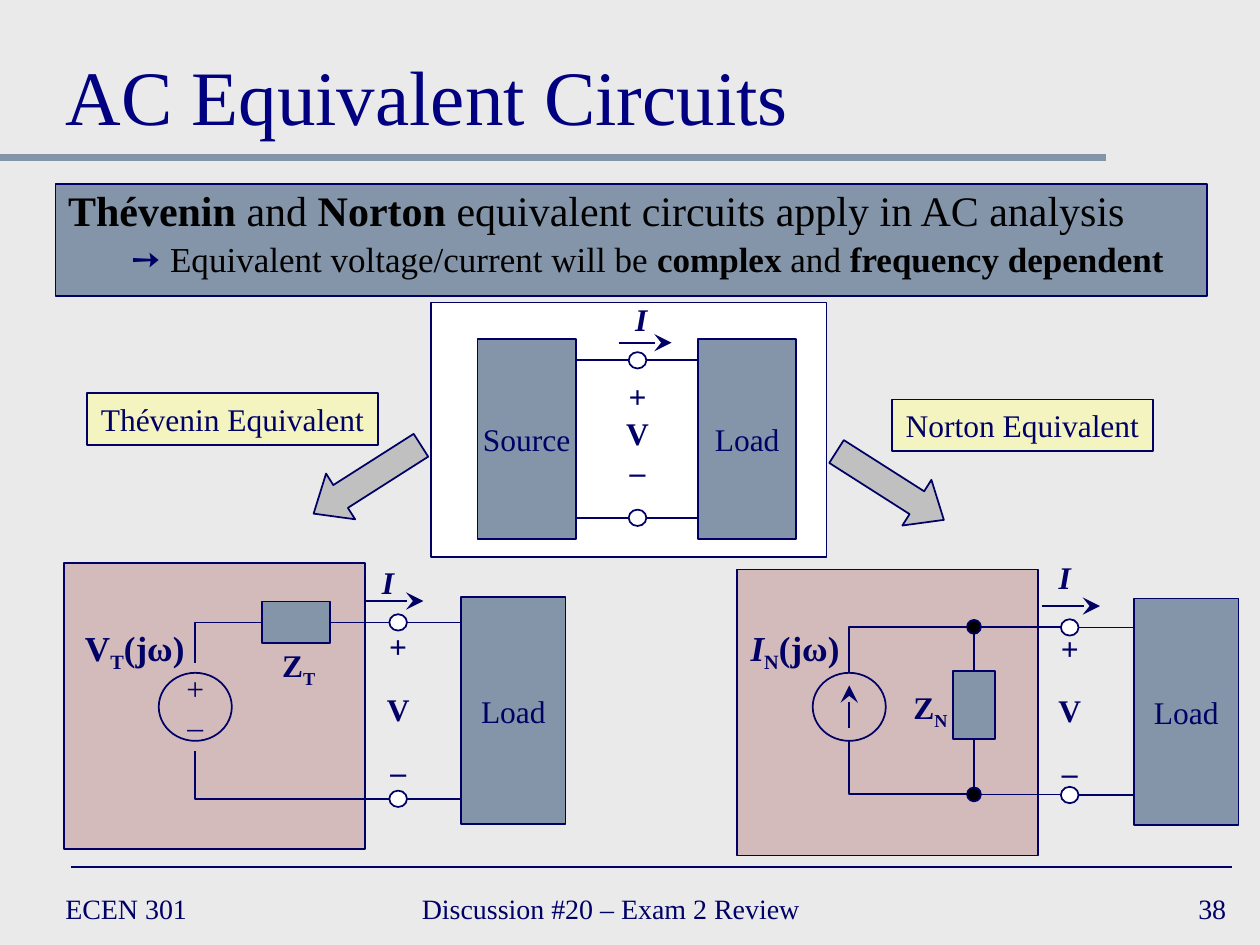
from dataclasses import dataclass
from lxml import etree
from pptx import Presentation
from pptx import util as u
from pptx.dml.color import RGBColor
from pptx.enum import shapes, text
from pptx.oxml import ns

RECT, OVAL = shapes.MSO_SHAPE.RECTANGLE, shapes.MSO_SHAPE.OVAL
LEFT, CENTER, RIGHT = text.PP_ALIGN.LEFT, text.PP_ALIGN.CENTER, text.PP_ALIGN.RIGHT
CELL = u.Inches(10) / 100  # the slide is a grid of 100 columns and 75 rows


@dataclass(frozen=True)
class Theme:
    font: str = "Times New Roman"
    paper: str = "EAEAEA"
    ink: str = "000066"
    title: str = "000080"
    steel: str = "8495A9"
    maroon: str = "800000"
    yellow: str = "FFFF99"
    grey: str = "C0C0C0"
    white: str = "FFFFFF"
    black: str = "000000"
    title_size: int = 44
    lead_size: int = 24
    detail_size: int = 20
    label_size: int = 18
    footer_size: int = 16


THEME = Theme()


def cells(*counts):
    return [u.Emu(round(count * CELL)) for count in counts]


def add_xml(parent, tag, **attributes):
    return etree.SubElement(parent, ns.qn(tag), attributes)


def color(name):
    return RGBColor.from_string(name)


def style(para, size, ink=THEME.ink, align=LEFT, bold=False):
    para.alignment = align
    font = para.font
    font.name, font.size, font.bold = THEME.font, u.Pt(size), bold
    font.color.rgb = color(ink)


def paint(shape, fill, alpha=None, width=1):
    shape.line.color.rgb = color(THEME.ink)
    shape.line.width = u.Pt(width)
    if fill is None:
        shape.fill.background()
        return
    shape.fill.solid()
    shape.fill.fore_color.rgb = color(fill)
    if alpha:
        tint = shape.fill._xPr.find(".//" + ns.qn("a:srgbClr"))
        add_xml(tint, "a:alpha", val=str(alpha * 1000))


@dataclass
class Area:
    """A region of the page; its parts are placed in cells from its corner."""
    page: object
    left: float = 0
    top: float = 0

    def inner(self, left, top):
        return Area(self.page, self.left + left, self.top + top)

    def shape(self, kind, left, top, width, height, fill=THEME.steel, alpha=None, caption=""):
        shape = self.page.shapes.add_shape(
            kind, *cells(self.left + left, self.top + top, width, height))
        shape.shadow.inherit = False
        paint(shape, fill, alpha)
        if caption:
            shape.text_frame.text = caption
            shape.text_frame.word_wrap = False
            style(shape.text_frame.paragraphs[0], THEME.label_size, align=CENTER)
        return shape

    def dot(self, x, y, width=1.4, height=1.3, fill=THEME.white):
        return self.shape(OVAL, x - width / 2, y - height / 2, width, height, fill)

    def wire(self, start, end, corner=False, arrow=False, ink=THEME.ink, width=1):
        """Draw a line; a corner wire leaves the start level and turns once."""
        ends = cells(self.left + start[0], self.top + start[1],
                     self.left + end[0], self.top + end[1])
        kind = shapes.MSO_CONNECTOR.ELBOW if corner else shapes.MSO_CONNECTOR.STRAIGHT
        wire = self.page.shapes.add_connector(kind, *ends)
        wire.line.color.rgb = color(ink)
        wire.line.width = u.Pt(width)
        properties = wire._element.spPr
        if corner:
            properties.find(ns.qn("a:prstGeom")).set("prst", "bentConnector2")
        if arrow:
            add_xml(wire.line._get_or_add_ln(), "a:tailEnd", type="stealth", w="lg", len="lg")
        add_xml(properties, "a:effectLst")
        return wire

    def label(self, left, top, width, height, lines, size=THEME.label_size,
              bold=True, gap=0, align=CENTER, wrap=False):
        """Write lines made of (words, look) spans; look is "", "sub" or "italic"."""
        box = self.page.shapes.add_textbox(
            *cells(self.left + left, self.top + top, width, height))
        frame = box.text_frame
        frame.word_wrap = wrap
        for index, spans in enumerate(lines):
            para = frame.paragraphs[0] if index == 0 else frame.add_paragraph()
            if index:
                para.space_before = u.Pt(gap)
            style(para, size, align=align, bold=bold)
            for words, look in spans:
                span = para.add_run()
                span.text = words
                if look == "italic":
                    span.font.italic = True
                elif look == "sub":
                    span._r.get_or_add_rPr().set("baseline", "-25000")
        return box


def plain(*lines):
    return [[(line, "")] for line in lines]


def heading(page):
    title, body = page.shapes.title, page.placeholders[1]
    title.left, title.top, title.width, title.height = cells(4.2, 1.7, 91.7, 10)
    title.text_frame.text = "AC Equivalent Circuits"
    title.text_frame.vertical_anchor = text.MSO_ANCHOR.BOTTOM
    style(title.text_frame.paragraphs[0], THEME.title_size, THEME.title)

    body.left, body.top, body.width, body.height = cells(4.4, 14.6, 91.4, 8.9)
    paint(body, THEME.steel, width=0.75)
    frame = body.text_frame
    frame.auto_size = text.MSO_AUTO_SIZE.NONE
    rows = (
        (THEME.lead_size, 0.38, -0.38, 0, None,
         (("Thévenin", True), (" and ", False), ("Norton", True),
          (" equivalent circuits apply in AC analysis", False))),
        (THEME.detail_size, 0.81, -0.31, 4, "➙",
         (("Equivalent voltage/current will be ", False), ("complex", True),
          (" and ", False), ("frequency dependent", True))))
    for level, (size, margin, indent, gap, bullet, spans) in enumerate(rows):
        para = frame.add_paragraph() if level else frame.paragraphs[0]
        para.level, para.line_spacing, para.space_before = level, 0.9, u.Pt(gap)
        layout = para._p.get_or_add_pPr()
        layout.set("marL", str(u.Inches(margin)))
        layout.set("indent", str(u.Inches(indent)))
        if bullet:
            add_xml(add_xml(layout, "a:buClr"), "a:srgbClr", val=THEME.ink)
            add_xml(layout, "a:buChar", char=bullet)
        else:
            add_xml(layout, "a:buNone")
        style(para, size, THEME.black)
        for words, bold in spans:
            span = para.add_run()
            span.text, span.font.bold = words, bold


def footer(area):
    area.wire((5.6, 0), (97.8, 0))
    for left, width, words, align in ((4.2, 21.7, "ECEN 301", LEFT),
                                      (32.5, 38.3, "Discussion #20 – Exam 2 Review", LEFT),
                                      (77.5, 20.8, "38", RIGHT)):
        box = area.label(left, 1.2, width, 4.2, plain(words), THEME.footer_size,
                         bold=False, align=align, wrap=True)
        box.text_frame.vertical_anchor = text.MSO_ANCHOR.MIDDLE


def port(area, upper, lower, load, arrow, symbol_rise, voltage_top, gap):
    """Two terminals wired to a load, with the current and voltage marked."""
    load_left, load_width, load_height = load
    for row in (upper, lower):
        area.wire((1.4, row), (load_left, row))
        area.dot(0.7, row)
    area.shape(RECT, load_left, 0, load_width, load_height, caption="Load")
    x, y, length = arrow
    area.wire((x, y), (x + length, y), arrow=True)
    area.label(x + 0.3, y - symbol_rise, 3, 4, [[("I", "italic")]])
    area.label(-1.2, voltage_top, 3.8, 10 + gap / 3.5, plain("+", "V", "–"), gap=gap)


def source_circuit(area):
    area.shape(RECT, 0, 0, 31.4, 20.2, THEME.white)
    area.shape(RECT, 3.7, 2.9, 7.8, 15.9, caption="Source")
    for row in (4.6, 17.1):
        area.wire((15.7, row), (11.5, row))
    port(area.inner(15.7, 2.9), 1.7, 14.2, (5.5, 7.8, 15.9), (-0.8, 0.3, 4.2), 3.9, 2.5, 0)


def thevenin_circuit(area):
    area.shape(RECT, 0, 0, 23.9, 22.7, THEME.maroon, alpha=20)
    area.label(0.6, 4.5, 10, 4.3, [[("V", ""), ("T", "sub"), ("(jω)", "")]], THEME.detail_size)
    area.shape(OVAL, 7.5, 8.7, 5.8, 5.4, None)
    area.label(8.7, 7.9, 3.4, 7, plain("+", "–"), bold=False)
    area.label(16.2, 6.1, 4.8, 4, [[("Z", ""), ("T", "sub")]])
    impedance = area.shape(RECT, 15.7, 3.05, 5.4, 3.3)
    area.wire((25.8, 4.7), (21.1, 4.7)).end_connect(impedance, 3)
    area.wire((15.7, 4.7), (10.4, 7.9), corner=True)
    area.wire((25.8, 18.7), (10.4, 14.9), corner=True)
    port(area.inner(25.8, 2.7), 2, 16, (5.7, 8.3, 18), (-1.9, 0.3, 4.6), 3.5, 1.9, 14)


def norton_circuit(area):
    area.shape(RECT, 0, 0, 23.9, 22.7, THEME.maroon, alpha=20)
    area.label(0, 4, 9.2, 4.3, [[("I", "italic"), ("N", "sub"), ("(jω)", "")]], THEME.detail_size)
    area.shape(OVAL, 6, 8.2, 5.8, 5.4, None)
    area.wire((8.9, 12.6), (8.9, 9.2), arrow=True)
    area.label(12.9, 8.9, 4.9, 4, [[("Z", ""), ("N", "sub")]])
    impedance = area.shape(RECT, 17.15, 8.05, 3.3, 5.4)
    for row, side, circle_edge in ((4.55, 0, 8.2), (17.85, 2, 13.6)):
        area.wire((18.8, row), (18.8, 8.05)).end_connect(impedance, side)
        area.wire((18.8, row), (8.9, circle_edge), corner=True)
        area.wire((18.8, row), (25.7, row))
        area.dot(18.8, row, 1.1, 1.1, THEME.black)
    port(area.inner(25.7, 2.3), 2.3, 15.6, (5.8, 8.3, 18), (-1.5, 0.6, 4.6), 4.3, 1.9, 14)


def equivalents(area):
    """Block arrows and captions that lead from the source to both circuits."""
    for left, top, turn in ((65.6, 36.4, 32.5), (24.1, 35.9, 147.5)):
        arrow = area.shape(shapes.MSO_SHAPE.RIGHT_ARROW, left, top, 10.1, 4.3, THEME.grey)
        arrow.adjustments[1] = 0.59
        arrow.rotation = turn
    for left, top, width, name in ((70.8, 31.7, 20.7, "Norton"), (6.9, 31.2, 23.1, "Thévenin")):
        area.shape(RECT, left, top, width, 4.1, THEME.yellow, 50, f"{name} Equivalent")


def main():
    deck = Presentation()
    deck.slide_width, deck.slide_height = cells(100, 75)
    page = deck.slides.add_slide(deck.slide_layouts[1])
    page.background.fill.solid()
    page.background.fill.fore_color.rgb = color(THEME.paper)
    area = Area(page)
    area.wire((0, 12.5), (87.8, 12.5), ink=THEME.steel, width=4)
    heading(page)
    footer(area.inner(0, 68.8))
    source_circuit(area.inner(34.2, 24))
    thevenin_circuit(area.inner(5.1, 44.7))
    norton_circuit(area.inner(58.5, 45.2))
    equivalents(area)
    deck.save("out.pptx")


if __name__ == "__main__":
    main()
